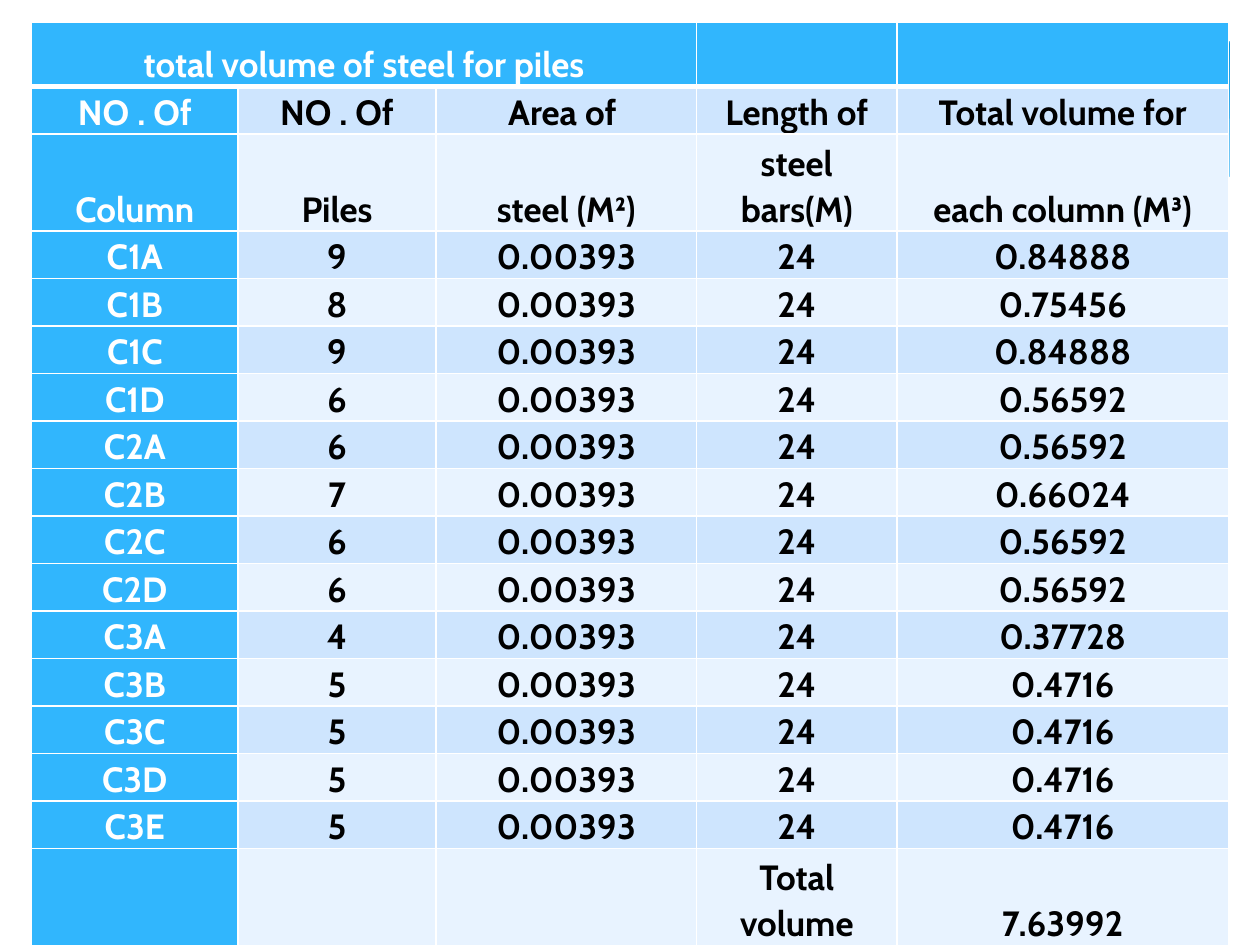
from typing import NamedTuple

from lxml import etree
from pptx import Presentation
from pptx.dml.color import RGBColor
from pptx.enum.shapes import MSO_SHAPE
from pptx.enum.text import MSO_ANCHOR, PP_ALIGN
from pptx.oxml.ns import qn
from pptx.util import Inches, Pt

ROUNDED = MSO_SHAPE.ROUNDED_RECTANGLE
BOTTOM = MSO_ANCHOR.BOTTOM
CENTER = PP_ALIGN.CENTER

COLORS = {
    "accent": "31B6FD", "dark_band": "CEE5FE", "light_band": "E8F3FF",
    "white": "FFFFFF", "black": "000000", "wave": "C6E7FC",
    "panel_top": "0293E0", "panel_bottom": "83D3FE",
}
FONT = {"name": "Cabin", "size": Pt(20), "bold": True}
CELL = {
    "margin_left": Inches(0.07), "margin_right": Inches(0.07),
    "margin_top": 0, "margin_bottom": 0, "vertical_anchor": BOTTOM,
}
TITLE_PARA = {"alignment": CENTER, "line_spacing": 1.5, "space_before": Pt(12)}
BODY_PARA = {"alignment": CENTER, "line_spacing": 1.07}

COL_WIDTHS = [1.64, 1.57, 2.07, 1.59, 2.63]
TABLE_H, TITLE_H, TALL_H = 7.32, 0.5, 0.77
STEEL_AREA, BAR_LENGTH = 0.00393, 24


class Column(NamedTuple):
    name: str
    piles: int


class Wave(NamedTuple):
    color: str
    opacity: int
    points: list[tuple[float, float]]


COLUMNS = [
    Column("C1A", 9), Column("C1B", 8), Column("C1C", 9), Column("C1D", 6),
    Column("C2A", 6), Column("C2B", 7), Column("C2C", 6), Column("C2D", 6),
    Column("C3A", 4), Column("C3B", 5), Column("C3C", 5), Column("C3D", 5),
    Column("C3E", 5),
]

# Waves that reach past the right edge of the table
WAVES = [
    Wave("wave", 29, [
        (9.76, 0.94), (9.35, 1.01), (8.91, 1.1), (8.32, 1.25), (7.79, 1.37),
        (7.29, 1.47), (6.61, 1.6), (7.05, 1.65), (7.57, 1.7), (8.14, 1.72),
        (8.63, 1.7), (9.05, 1.63), (9.42, 1.54), (9.76, 1.41)]),
    Wave("white", 100, [
        (9.77, 1.4), (9.4, 1.54), (8.99, 1.64), (8.5, 1.7), (7.93, 1.71),
        (7.26, 1.67), (6.48, 1.56), (5.55, 1.39), (4.47, 1.14), (3.65, 0.96),
        (2.92, 0.85), (2.3, 0.79), (1.77, 0.78), (1.19, 0.82), (0.67, 0.91),
        (0.23, 1.07), (0.23, 2.24), (9.77, 2.24)]),
]


def rgb(name: str) -> RGBColor:
    return RGBColor.from_string(COLORS[name])


def apply(target, values: dict) -> None:
    for key, value in values.items():
        setattr(target, key, value)


def volume(piles: int) -> str:
    return f"{piles * STEEL_AREA * BAR_LENGTH:g}"


def table_rows() -> list[list[str]]:
    rows = [
        ["total volume of steel for piles", "", "", "", ""],
        ["NO . Of", "NO . Of", "Area of ", "Length of", "Total volume for"],
        ["Column", "Piles", "steel (M²)", "steel bars(M)", "each column (M³)"],
    ]
    for c in COLUMNS:
        rows.append([c.name, str(c.piles), str(STEEL_AREA), str(BAR_LENGTH),
                     volume(c.piles)])
    total = volume(sum(c.piles for c in COLUMNS))
    rows.append(["", "", "", "Total volume", total])
    return rows


def set_border(cell, side: str, width: float) -> None:
    ln = etree.SubElement(cell._tc.get_or_add_tcPr(), qn(f"a:ln{side}"),
                          w=str(Pt(width)))
    fill = etree.SubElement(ln, qn("a:solidFill"))
    etree.SubElement(fill, qn("a:srgbClr"), val=COLORS["white"])


def format_cell(cell, text: str, row: int, col: int) -> None:
    # Thick rule between the title row and the rest
    thick = {"T": row == 1, "B": row == 0}
    for side in "LRTB":
        set_border(cell, side, 3 if thick.get(side) else 1)

    accent = row == 0 or col == 0
    band = "dark_band" if row % 2 else "light_band"
    cell.fill.solid()
    cell.fill.fore_color.rgb = rgb("accent" if accent else band)
    apply(cell, CELL)
    if text:
        p = cell.text_frame.paragraphs[0]
        apply(p, TITLE_PARA if row == 0 else BODY_PARA)
        r = p.add_run()
        r.text = text
        apply(r.font, FONT)
        r.font.color.rgb = rgb("white" if accent else "black")


def add_panel(s) -> None:
    panel = s.shapes.add_shape(ROUNDED, Inches(0.25), Inches(0.25),
                               Inches(9.51), Inches(1.56))
    panel.adjustments[0] = 0.07
    panel.shadow.inherit = False
    panel.line.fill.background()
    panel.fill.gradient()
    panel.fill.gradient_angle = 270
    stops = zip(panel.fill.gradient_stops, ("panel_top", "panel_bottom"), (0, 0.9))
    for stop, color, position in stops:
        stop.color.rgb = rgb(color)
        stop.position = position


def add_wave(s, wave: Wave) -> None:
    points = [(Inches(x), Inches(y)) for x, y in wave.points]
    builder = s.shapes.build_freeform(*points[0])
    builder.add_line_segments(points[1:], close=True)
    sp = builder.convert_to_shape()
    sp.shadow.inherit = False
    sp.line.fill.background()
    sp.fill.solid()
    sp.fill.fore_color.rgb = rgb(wave.color)
    if wave.opacity < 100:
        color = sp._element.spPr.find(qn("a:solidFill"))[0]
        etree.SubElement(color, qn("a:alpha"), val=str(wave.opacity * 1000))


def add_steel_table(s) -> None:
    rows = table_rows()
    table = s.shapes.add_table(len(rows), len(COL_WIDTHS), Inches(0.25),
                               Inches(0.18), Inches(9.5), Inches(TABLE_H)).table
    for column, width in zip(table.columns, COL_WIDTHS):
        column.width = Inches(width)

    # Two tall rows hold wrapped text; the others share what is left
    heights = {0: TITLE_H, 2: TALL_H, len(rows) - 1: TALL_H}
    plain_h = (TABLE_H - sum(heights.values())) / (len(rows) - len(heights))
    for i, values in enumerate(rows):
        table.rows[i].height = Inches(heights.get(i, plain_h))
        for j, text in enumerate(values):
            format_cell(table.cell(i, j), text, i, j)
    table.cell(0, 0).merge(table.cell(0, 2))


def main() -> None:
    prs = Presentation()
    prs.slide_width, prs.slide_height = Inches(10), Inches(7.5)
    s = prs.slides.add_slide(prs.slide_layouts[6])
    add_panel(s)
    for wave in WAVES:
        add_wave(s, wave)
    add_steel_table(s)
    prs.save("out.pptx")


if __name__ == "__main__":
    main()
